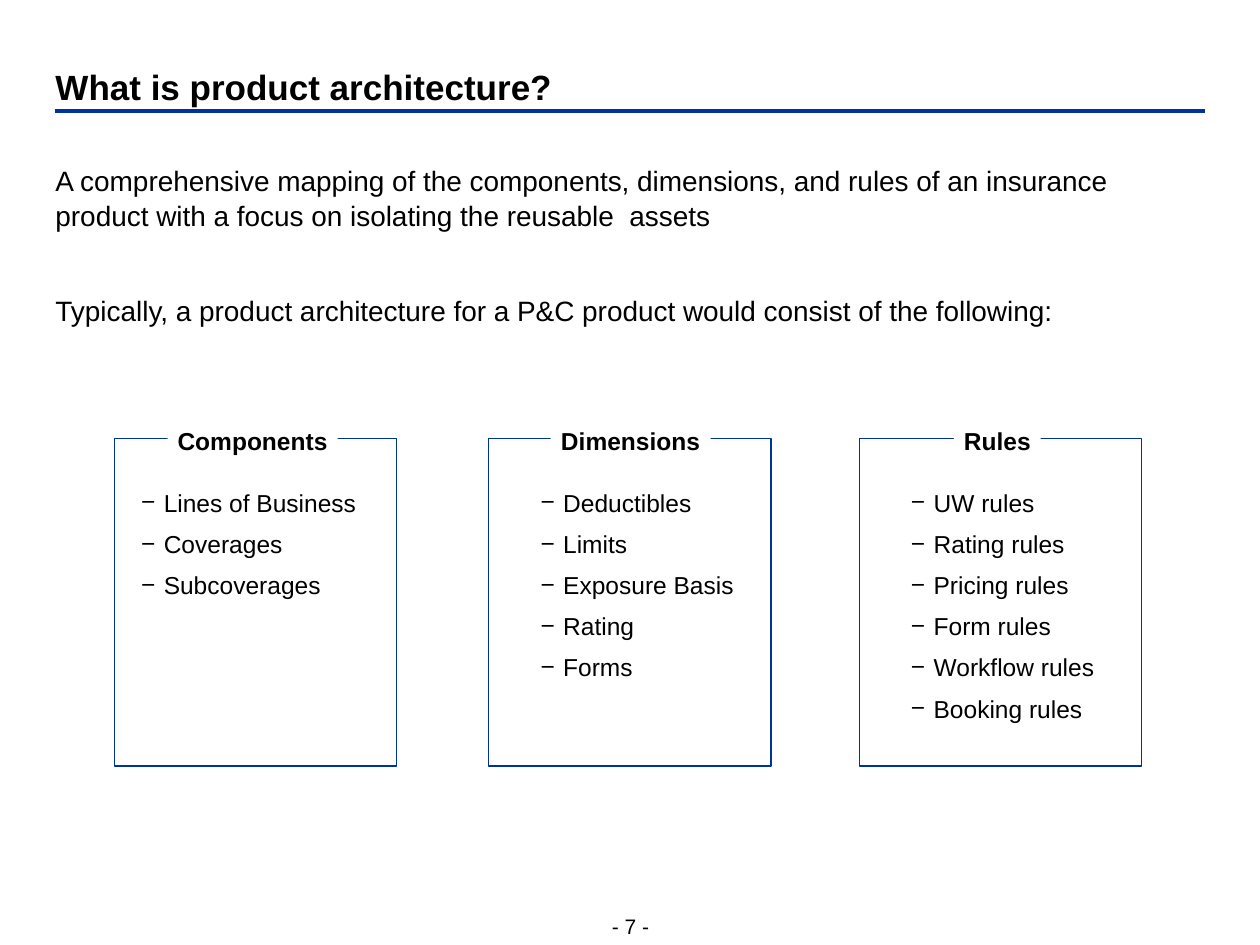
from dataclasses import dataclass

from lxml import etree
from pptx import Presentation
from pptx.dml.color import RGBColor
from pptx.enum import shapes, text
from pptx.oxml import ns
from pptx.util import Inches, Pt


@dataclass(frozen=True)
class Theme:
    font: str = "Arial"
    ink: RGBColor = RGBColor(0x00, 0x00, 0x00)
    accent: RGBColor = RGBColor(0x00, 0x33, 0x99)
    paper: RGBColor = RGBColor(0xFF, 0xFF, 0xFF)
    title: int = 20
    body: int = 16
    item: int = 14
    footer: int = 12


THEME = Theme()
LEFT, WIDTH = 0.44, 9.12
PANEL_TOP, PANEL_WIDTH, PANEL_HEIGHT = 3.48, 2.24, 2.6

INTRO = [
    "A comprehensive mapping of the components, dimensions, and rules of an "
    "insurance product with a focus on isolating the reusable  assets",
    "Typically, a product architecture for a P&C product would consist of "
    "the following:",
]

# Panel left, list inset, heading left, heading width, heading, items
PANELS = [
    (0.91, 0.2, 1.33, 1.35, "Components",
     ["Lines of Business", "Coverages", "Subcoverages"]),
    (3.88, 0.4, 4.37, 1.27, "Dimensions",
     ["Deductibles", "Limits", "Exposure Basis", "Rating", "Forms"]),
    (6.82, 0.4, 7.57, 0.69, "Rules",
     ["UW rules", "Rating rules", "Pricing rules", "Form rules",
      "Workflow rules", "Booking rules"]),
]


def set_frame(shape, insets=(0, 0, 0, 0), anchor=text.MSO_ANCHOR.TOP, wrap=True):
    """Set the insets (left, top, right, bottom), anchor and wrapping."""
    frame = shape.text_frame
    (frame.margin_left, frame.margin_top,
     frame.margin_right, frame.margin_bottom) = map(Inches, insets)
    frame.vertical_anchor = anchor
    frame.word_wrap = wrap
    return frame


def add_span(para, words, size, bold=False):
    span = para.add_run()
    span.text = words
    span.font.name = THEME.font
    span.font.size = Pt(size)
    span.font.bold = bold
    span.font.color.rgb = THEME.ink


def add_paras(frame, lines, size, gap):
    """Write one paragraph per line, with a gap in points between them."""
    for index, words in enumerate(lines):
        para = frame.add_paragraph() if index else frame.paragraphs[0]
        para.alignment = text.PP_ALIGN.LEFT
        para.space_before = Pt(gap if index else 0)
        add_span(para, words, size)
    return frame.paragraphs


def add_dash(para):
    props = para._p.get_or_add_pPr()
    props.set("marL", str(Inches(0.19)))
    props.set("indent", str(Inches(-0.18)))
    color = etree.SubElement(props, ns.qn("a:buClr"))
    etree.SubElement(color, ns.qn("a:srgbClr"), val=str(THEME.ink))
    etree.SubElement(props, ns.qn("a:buFont"), typeface=THEME.font)
    etree.SubElement(props, ns.qn("a:buChar"), char="−")


def add_box(page, left, top, width, height):
    box = page.shapes.add_shape(
        shapes.MSO_SHAPE.RECTANGLE,
        Inches(left), Inches(top), Inches(width), Inches(height))
    box.shadow.inherit = False
    return box


def add_title(page, left, top, width, height):
    """Add the title with the rule just below it."""
    box = page.shapes.add_textbox(
        Inches(left), Inches(top), Inches(width), Inches(height))
    frame = set_frame(box, anchor=text.MSO_ANCHOR.BOTTOM)
    add_span(frame.paragraphs[0], "What is product architecture?",
             THEME.title, bold=True)
    rule_y = Inches(top + height + 0.03)
    rule = page.shapes.add_connector(
        shapes.MSO_CONNECTOR.STRAIGHT,
        Inches(left), rule_y, Inches(left + width), rule_y)
    rule.line.color.rgb = THEME.accent
    rule.line.width = Pt(2.25)
    etree.SubElement(rule._element.spPr, ns.qn("a:effectLst"))


def add_intro(page, left, top, width, height):
    box = page.shapes.add_textbox(
        Inches(left), Inches(top), Inches(width), Inches(height))
    for para in add_paras(set_frame(box), INTRO, THEME.body, gap=34):
        para.line_spacing = 1.06


def add_panel(page, left, top, width, height, inset, items):
    panel = add_box(page, left, top, width, height)
    panel.fill.background()
    panel.line.color.rgb = THEME.accent
    panel.line.width = Pt(0.75)
    frame = set_frame(panel, (inset, 0.39, 0.1, 0.05))
    for para in add_paras(frame, items, THEME.item, gap=6.75):
        para.level = 1
        add_dash(para)


def add_heading(page, left, top, width, height, words):
    """Add a panel heading that interrupts the panel's top edge."""
    box = add_box(page, left, top, width, height)
    box.fill.solid()
    box.fill.fore_color.rgb = THEME.paper
    box.line.fill.background()
    frame = set_frame(box, (0.08, 0, 0.08, 0), text.MSO_ANCHOR.BOTTOM, wrap=False)
    para = frame.paragraphs[0]
    para.alignment = text.PP_ALIGN.CENTER
    para.line_spacing = 0.95
    add_span(para, words, THEME.item, bold=True)


def add_page_number(page, left, top, width, height):
    box = page.shapes.add_textbox(
        Inches(left), Inches(top), Inches(width), Inches(height))
    frame = set_frame(box, anchor=text.MSO_ANCHOR.BOTTOM, wrap=False)
    para = frame.paragraphs[0]
    para.alignment = text.PP_ALIGN.CENTER
    para.line_spacing = 1.06
    add_span(para, "- 7 -", THEME.footer)


def main():
    deck = Presentation()
    deck.slide_width, deck.slide_height = Inches(10), Inches(7.5)
    page = deck.slides.add_slide(deck.slide_layouts[6])
    add_title(page, LEFT, 0.45, WIDTH, 0.4)
    add_intro(page, LEFT, 1.28, WIDTH, 1.5)
    for left, inset, heading_left, heading_width, heading, items in PANELS:
        add_panel(page, left, PANEL_TOP, PANEL_WIDTH, PANEL_HEIGHT, inset, items)
        add_heading(page, heading_left, PANEL_TOP - 0.08, heading_width, 0.22,
                    heading)
    add_page_number(page, 4.8, 7.24, 0.41, 0.21)
    deck.save("out.pptx")


if __name__ == "__main__":
    main()
